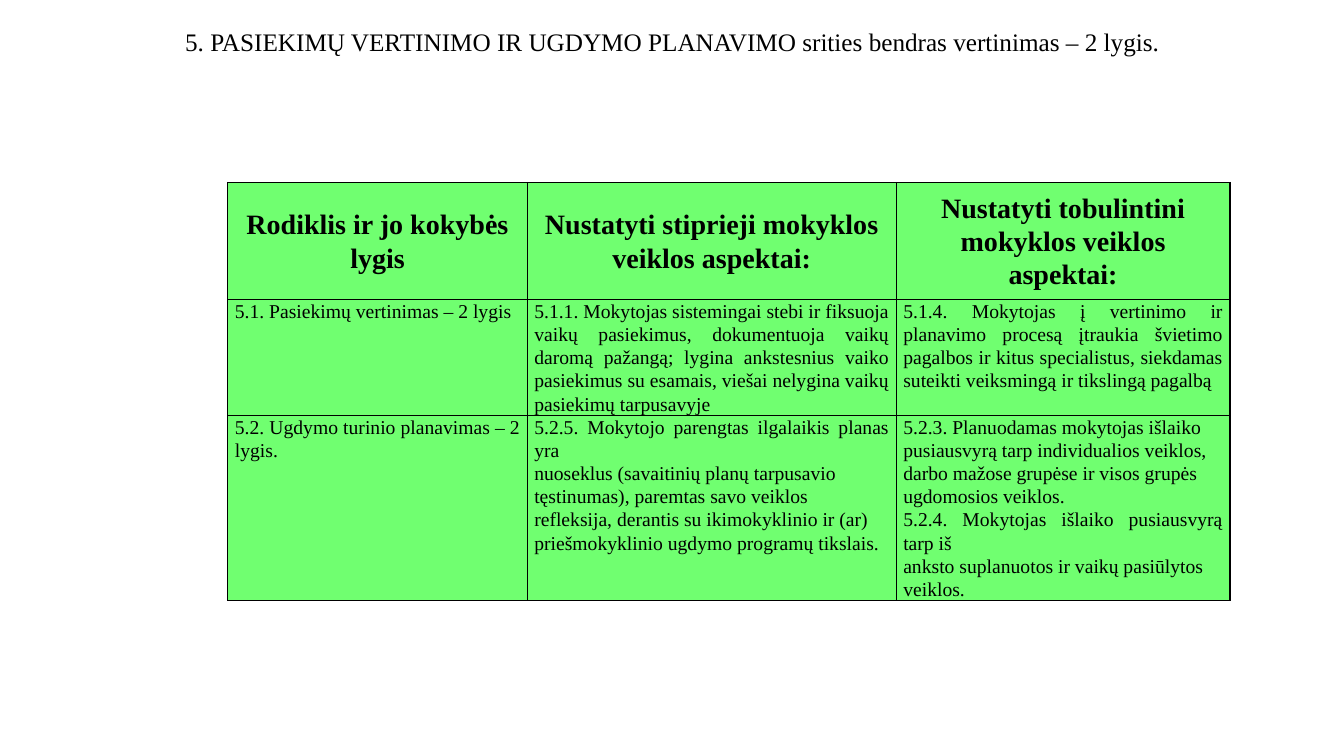
import pptx
import pptx.dml.color
import pptx.enum.text
import pptx.oxml
import pptx.oxml.ns
import pptx.util

Inches = pptx.util.Inches
RGBColor = pptx.dml.color.RGBColor
ALIGN = pptx.enum.text.PP_ALIGN
ANCHOR = pptx.enum.text.MSO_ANCHOR

BLACK = RGBColor(0x00, 0x00, 0x00)
GREEN = RGBColor(0x70, 0xFF, 0x70)
FONT = "Times New Roman"

TITLE = "5. PASIEKIMŲ VERTINIMO IR UGDYMO PLANAVIMO srities bendras vertinimas – 2 lygis."
COLUMN_WIDTHS = [2.97, 3.66, 3.31]
ROW_HEIGHTS = [1.16, 1.15, 1.84]
# Each line of a cell is a paragraph of its own.
ROWS = [
    [
        "Rodiklis ir jo kokybės lygis",
        "Nustatyti stiprieji mokyklos veiklos aspektai:",
        "Nustatyti tobulintini mokyklos veiklos aspektai:",
    ],
    [
        "5.1. Pasiekimų vertinimas – 2 lygis",
        "5.1.1. Mokytojas sistemingai stebi ir fiksuoja vaikų pasiekimus, "
        "dokumentuoja vaikų daromą pažangą; lygina ankstesnius vaiko pasiekimus "
        "su esamais, viešai nelygina vaikų pasiekimų tarpusavyje",
        "5.1.4. Mokytojas į vertinimo ir planavimo procesą įtraukia švietimo "
        "pagalbos ir kitus specialistus, siekdamas suteikti veiksmingą ir "
        "tikslingą pagalbą",
    ],
    [
        "5.2. Ugdymo turinio planavimas – 2 lygis.",
        "5.2.5. Mokytojo parengtas ilgalaikis planas yra\n"
        "nuoseklus (savaitinių planų tarpusavio\n"
        "tęstinumas), paremtas savo veiklos\n"
        "refleksija, derantis su ikimokyklinio ir (ar)\n"
        "priešmokyklinio ugdymo programų tikslais.",
        "5.2.3. Planuodamas mokytojas išlaiko\n"
        "pusiausvyrą tarp individualios veiklos,\n"
        "darbo mažose grupėse ir visos grupės\n"
        "ugdomosios veiklos.\n"
        "5.2.4. Mokytojas išlaiko pusiausvyrą tarp iš\n"
        "anksto suplanuotos ir vaikų pasiūlytos\n"
        "veiklos.",
    ],
]


def write_text(text_frame, text, size, alignment, bold=False, line_spacing=1.0):
    text_frame.text = text
    for paragraph in text_frame.paragraphs:
        paragraph.alignment = alignment
        paragraph.line_spacing = line_spacing
        for run in paragraph.runs:
            run.font.name = FONT
            run.font.size = pptx.util.Pt(size)
            run.font.bold = bold
            run.font.color.rgb = BLACK


def add_borders(cell, color, width):
    properties = cell._tc.get_or_add_tcPr()
    for side in ("lnL", "lnR", "lnT", "lnB"):
        properties.append(pptx.oxml.parse_xml(
            f'<a:{side} {pptx.oxml.ns.nsdecls("a")} w="{pptx.util.Pt(width)}">'
            f'<a:solidFill><a:srgbClr val="{color}"/></a:solidFill></a:{side}>'
        ))


presentation = pptx.Presentation()
presentation.slide_width = Inches(13.33)
presentation.slide_height = Inches(7.5)
slide = presentation.slides.add_slide(presentation.slide_layouts.get_by_name("Title Only"))

title = slide.shapes.title
title.left, title.top = Inches(0.67), Inches(0.21)
title.width, title.height = Inches(12), Inches(0.64)
title.text_frame.vertical_anchor = ANCHOR.TOP
write_text(title.text_frame, TITLE, size=18, alignment=ALIGN.CENTER)

table = slide.shapes.add_table(
    len(ROW_HEIGHTS), len(COLUMN_WIDTHS), Inches(2.26), Inches(1.81),
    Inches(sum(COLUMN_WIDTHS)), Inches(sum(ROW_HEIGHTS)),
).table
table.first_row = False
table.horz_banding = False
for column, width in zip(table.columns, COLUMN_WIDTHS):
    column.width = Inches(width)

for row_index, (row, height) in enumerate(zip(table.rows, ROW_HEIGHTS)):
    row.height = Inches(height)
    is_header = row_index == 0
    for cell, text in zip(row.cells, ROWS[row_index]):
        cell.margin_left = cell.margin_right = Inches(0.07)
        cell.margin_top = cell.margin_bottom = 0
        cell.vertical_anchor = ANCHOR.MIDDLE if is_header else ANCHOR.TOP
        add_borders(cell, BLACK, width=1)
        cell.fill.solid()
        cell.fill.fore_color.rgb = GREEN
        write_text(
            cell.text_frame, text,
            size=20 if is_header else 14,
            alignment=ALIGN.CENTER if is_header else ALIGN.JUSTIFY,
            bold=is_header,
            line_spacing=1.07,
        )

presentation.save("out.pptx")
